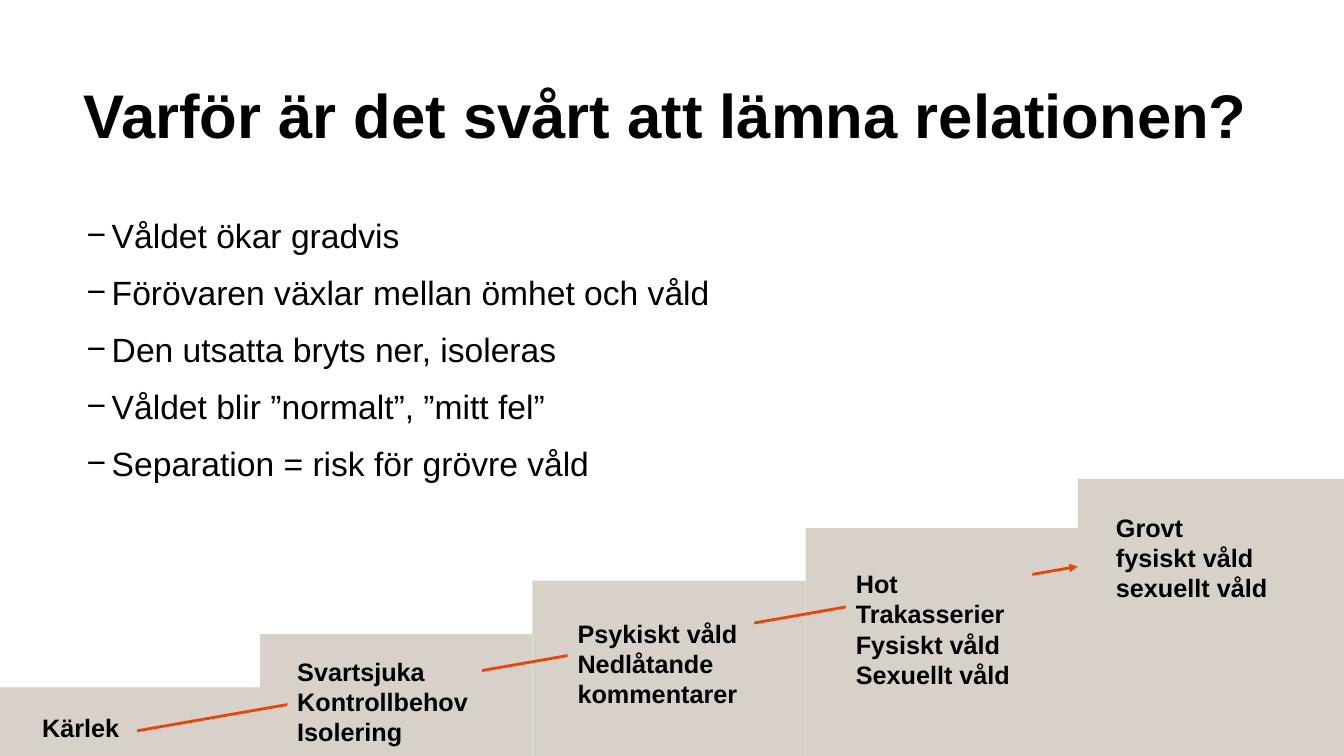
from lxml.etree import SubElement
from pptx import Presentation
from pptx.dml.color import RGBColor
from pptx.enum.shapes import MSO_CONNECTOR, MSO_SHAPE
from pptx.enum.text import MSO_ANCHOR, PP_ALIGN
from pptx.oxml.ns import qn
from pptx.util import Pt

PX = 9144
SLIDE_WIDTH, SLIDE_HEIGHT = 1333, 750
BLACK = RGBColor(0x00, 0x00, 0x00)
STONE = RGBColor(0xD7, 0xD1, 0xCA)
ORANGE = RGBColor(0xE6, 0x46, 0x0A)

REASONS = [
    "Våldet ökar gradvis",
    "Förövaren växlar mellan ömhet och våld",
    "Den utsatta bryts ner, isoleras",
    "Våldet blir ”normalt”, ”mitt fel”",
    "Separation = risk för grövre våld",
]
STEPS = [(0, 682), (258, 629), (528, 576), (799, 524), (1069, 475)]
STAGES = [
    ((32, 702, 103, 40), ["Kärlek"]),
    ((285, 646, 193, 101), ["Svartsjuka", "Kontrollbehov", "Isolering"]),
    ((563, 608, 185, 101), ["Psykiskt våld", "Nedlåtande kommentarer"]),
    ((839, 559, 185, 131), ["Hot", "Trakasserier Fysiskt våld", "Sexuellt våld"]),
    ((1097, 503, 176, 101), ["Grovt", "fysiskt våld", "sexuellt våld"]),
]


def emu(*lengths):
    """Turn px lengths into EMU."""
    return [length * PX for length in lengths]


def add_bullet(paragraph, mark, indent, hanging):
    """Give a paragraph a hanging bullet."""
    properties = paragraph._p.get_or_add_pPr()
    properties.set("marL", str(indent * PX))
    properties.set("indent", str(-hanging * PX))
    SubElement(properties, qn("a:buFont"), typeface="Arial")
    SubElement(properties, qn("a:buChar"), char=mark)


def write_text(frame, lines, size, bold=False, bullet=None, space_after=0, line_spacing=None):
    """Fill a text frame with one paragraph per line."""
    frame.word_wrap = True
    frame.vertical_anchor = MSO_ANCHOR.TOP
    for index, line in enumerate(lines):
        paragraph = frame.add_paragraph() if index else frame.paragraphs[0]
        paragraph.alignment = PP_ALIGN.LEFT
        paragraph.space_after = Pt(space_after)
        if line_spacing:
            paragraph.line_spacing = line_spacing
        if bullet:
            add_bullet(paragraph, bullet, indent=28, hanging=25)
        run = paragraph.add_run()
        run.text = line
        run.font.name = "Arial"
        run.font.size = Pt(size)
        run.font.bold = bold
        run.font.color.rgb = BLACK


def add_text(slide, box, lines, **text_format):
    """Add a text box."""
    write_text(slide.shapes.add_textbox(*emu(*box)).text_frame, lines, **text_format)


def add_block(slide, box):
    """Add a plain stone-coloured rectangle."""
    block = slide.shapes.add_shape(MSO_SHAPE.RECTANGLE, *emu(*box))
    block.shadow.inherit = False
    block.fill.solid()
    block.fill.fore_color.rgb = STONE
    block.line.fill.background()
    return block


def add_arrow(slide, start, end):
    """Add an orange arrow with a triangular head."""
    arrow = slide.shapes.add_connector(MSO_CONNECTOR.STRAIGHT, *emu(*start, *end))
    arrow.line.color.rgb = ORANGE
    arrow.line.width = Pt(2)
    SubElement(arrow.line._get_or_add_ln(), qn("a:tailEnd"), type="triangle")
    SubElement(arrow._element.spPr, qn("a:effectLst"))


def main():
    """Build the slide and save it."""
    presentation = Presentation()
    presentation.slide_width, presentation.slide_height = emu(SLIDE_WIDTH, SLIDE_HEIGHT)
    slide = presentation.slides.add_slide(presentation.slide_layouts[6])

    add_text(slide, (73, 86, 1187, 122), ["Varför är det svårt att lämna relationen?"],
             size=44, bold=True, line_spacing=0.8)
    add_text(slide, (73, 208, 1051, 287), REASONS, size=24, bullet="−", space_after=12)

    right_edges = [left for left, _ in STEPS[1:]] + [SLIDE_WIDTH]
    for (left, top), right in zip(STEPS, right_edges):
        add_block(slide, (left, top, right - left, SLIDE_HEIGHT - top))
    add_arrow(slide, (136, 725), (1069, 562))
    for box, lines in STAGES:
        write_text(add_block(slide, box).text_frame, lines, size=18, bold=True)

    presentation.save("out.pptx")


if __name__ == "__main__":
    main()
